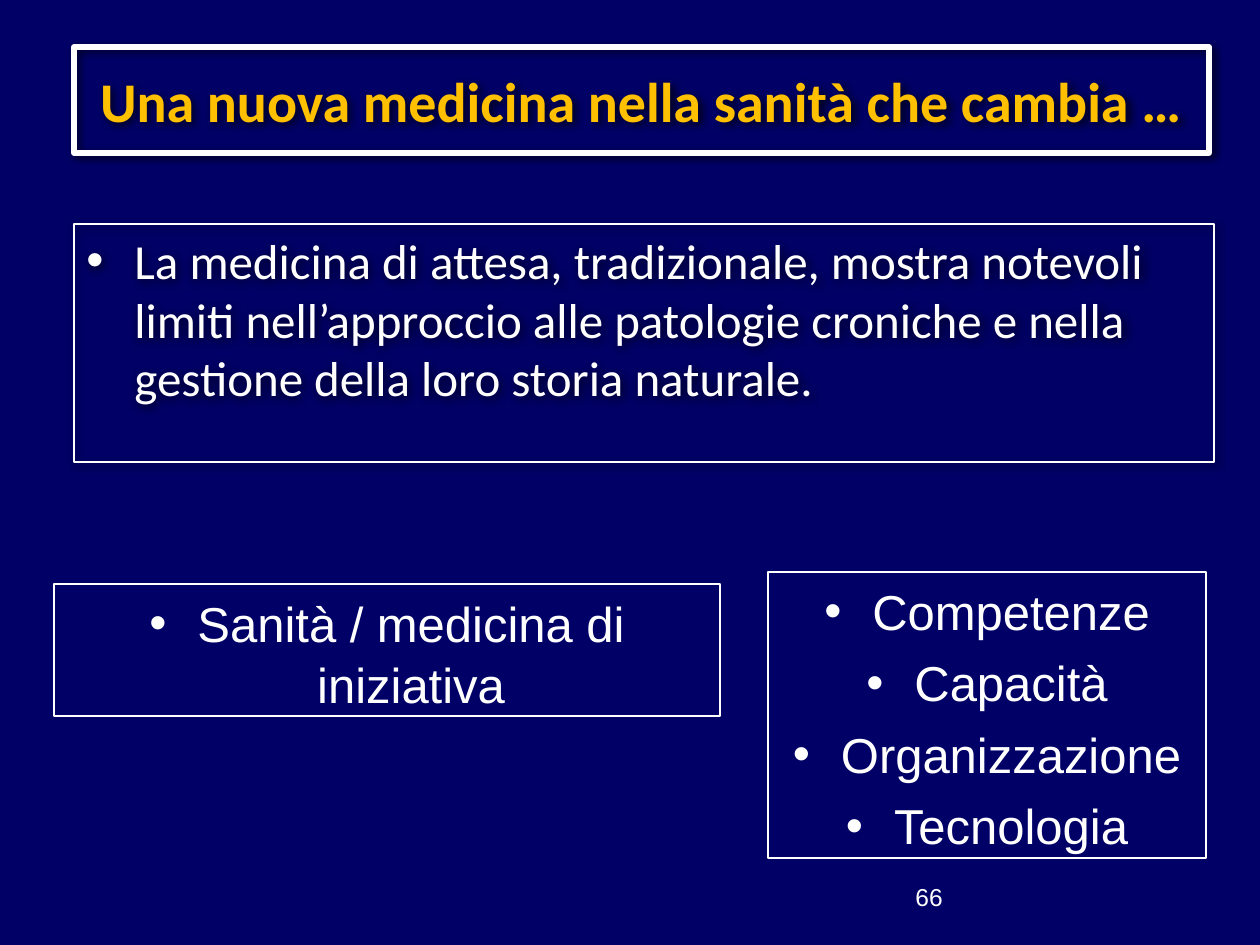
from lxml.etree import SubElement
from pptx import Presentation
from pptx.dml.color import RGBColor
from pptx.enum.shapes import MSO_SHAPE
from pptx.enum.text import MSO_ANCHOR, MSO_AUTO_SIZE, PP_ALIGN
from pptx.oxml import parse_xml
from pptx.oxml.ns import nsdecls, qn
from pptx.util import Pt

PX = 914400 / 126
NAVY = RGBColor(0x00, 0x00, 0x66)
WHITE = RGBColor(0xFF, 0xFF, 0xFF)
GOLD = RGBColor(0xFF, 0xC0, 0x00)
INDENT = 48


def px(length):
    return round(length * PX)


def write(box, lines, size=28, font="Arial", color=WHITE, bold=False,
          align=PP_ALIGN.LEFT, anchor=MSO_ANCHOR.TOP, bullet=False, spacing=None):
    frame = box.text_frame
    frame.word_wrap = True
    frame.auto_size = MSO_AUTO_SIZE.NONE
    frame.vertical_anchor = anchor
    frame.margin_left = frame.margin_right = Pt(7.2)
    frame.margin_top = frame.margin_bottom = Pt(3.6)
    for number, line in enumerate(lines):
        para = frame.add_paragraph() if number else frame.paragraphs[0]
        para.alignment = align
        para.line_spacing = spacing
        if bullet:
            para.space_before = Pt(5.6)
            props = para._p.get_or_add_pPr()
            props.set("marL", str(px(INDENT)))
            props.set("indent", str(-px(INDENT)))
            SubElement(props, qn("a:buFont"), typeface="Arial")
            SubElement(props, qn("a:buChar"), char="•")
        span = para.add_run()
        span.text = line
        span.font.size = Pt(size)
        span.font.name = font
        span.font.bold = bold
        span.font.color.rgb = color


def add_shadow(box):
    props = box._element.spPr
    for old in props.findall(qn("a:effectLst")):
        props.remove(old)
    props.append(parse_xml(
        f'<a:effectLst {nsdecls("a")}>'
        '<a:outerShdw blurRad="63500" dist="17780" dir="2700000" algn="tl" rotWithShape="0">'
        '<a:srgbClr val="000000"><a:alpha val="75000"/></a:srgbClr>'
        '</a:outerShdw></a:effectLst>'))


deck = Presentation()
deck.slide_width, deck.slide_height = px(1260), px(945)
page = deck.slides.add_slide(deck.slide_layouts[5])
page.background.fill.solid()
page.background.fill.fore_color.rgb = NAVY

title = page.shapes.title
title.left, title.top, title.width, title.height = px(74), px(47), px(1135), px(106)
title.line.color.rgb = WHITE
title.line.width = Pt(3)
SubElement(title.line._get_or_add_ln(), qn("a:round"))
add_shadow(title)
write(title, ["Una nuova medicina nella sanità che cambia …"], size=32, font="Calibri",
      color=GOLD, bold=True, align=PP_ALIGN.CENTER, anchor=MSO_ANCHOR.MIDDLE)

limits = ["La medicina di attesa, tradizionale, mostra notevoli limiti nell’approccio "
          "alle patologie croniche e nella gestione della loro storia naturale."]
needs = ["Competenze", "Capacità", "Organizzazione", "Tecnologia"]
initiative = ["Sanità / medicina di iniziativa"]
centred = {"align": PP_ALIGN.CENTER, "spacing": 1.05}
framed_lists = [
    ((74, 224, 1140, 238), limits, {"font": "Calibri"}),
    ((768, 572, 438, 286), needs, centred),
    ((54, 584, 666, 132), initiative, centred),
]
for place, lines, style in framed_lists:
    box = page.shapes.add_shape(MSO_SHAPE.RECTANGLE, *map(px, place))
    box.fill.background()
    box.line.color.rgb = WHITE
    box.line.width = Pt(0.75)
    box.shadow.inherit = False
    if lines is limits:
        add_shadow(box)
    write(box, lines, bullet=True, **style)

page_number = page.shapes.add_textbox(px(903), px(876), px(294), px(50))
write(page_number, ["66"], size=14)

deck.save("out.pptx")
